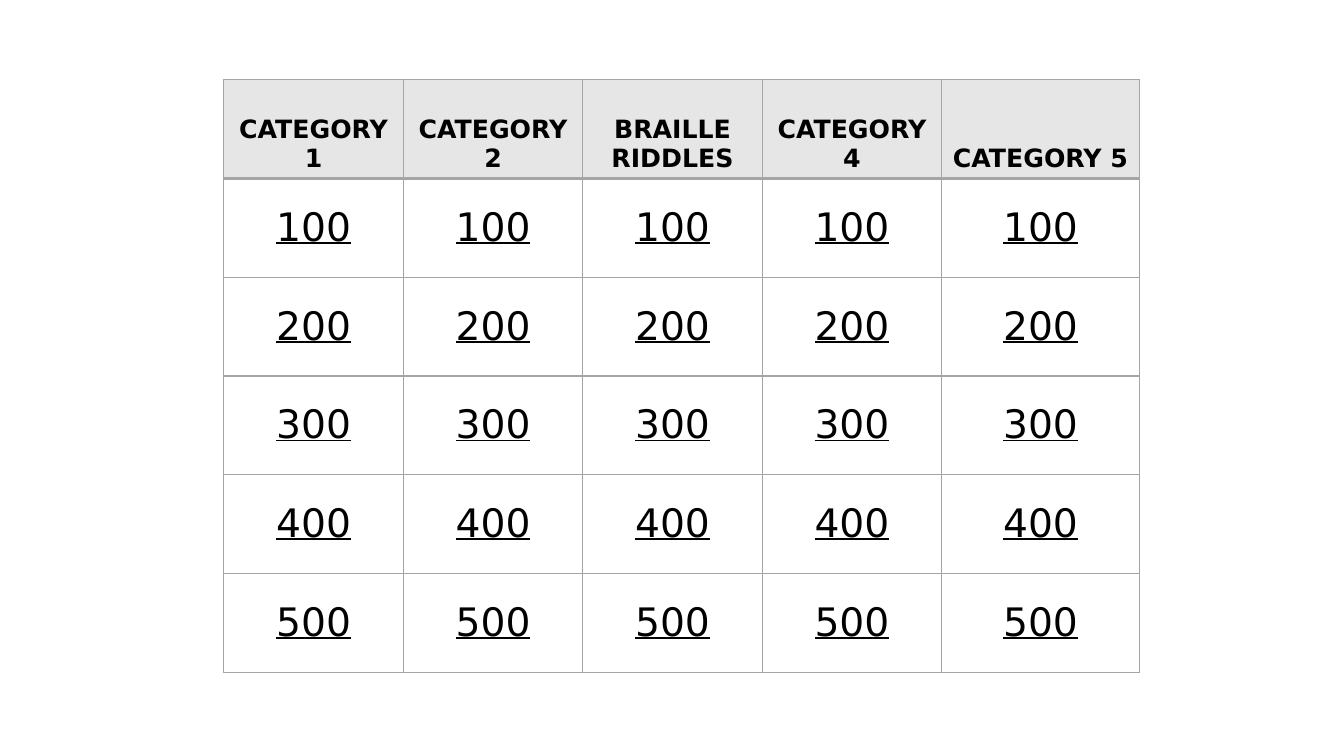
from pptx import Presentation
from pptx.dml.color import RGBColor
from pptx.enum.text import MSO_ANCHOR, PP_ALIGN
from pptx.oxml import parse_xml
from pptx.oxml.ns import nsdecls
from pptx.util import Inches, Pt

COLORS = {"head": "E7E6E6", "body": "FFFFFF", "line": "A5A5A5", "text": "000000"}
FONT = "DejaVu Sans"
HEADS = ["CATEGORY 1", "CATEGORY 2", "BRAILLE RIDDLES", "CATEGORY 4", "CATEGORY 5"]
WIDTHS = [1.78] * 4 + [1.96]
HEIGHT = 0.98

rows = [HEADS] + [[str(100 * n)] * len(HEADS) for n in range(1, 6)]


def add_edge(cell, side, width):
    cell._tc.get_or_add_tcPr().append(parse_xml(
        f'<a:ln{side} {nsdecls("a")} w="{Pt(width)}"><a:solidFill>'
        f'<a:srgbClr val="{COLORS["line"]}"/></a:solidFill></a:ln{side}>'))


deck = Presentation()
deck.slide_width = Inches(13.33)
deck.slide_height = Inches(7.5)
slide = deck.slides.add_slide(deck.slide_layouts[6])

frame = slide.shapes.add_table(
    len(rows), len(HEADS), Inches(2.22), Inches(0.79),
    Inches(sum(WIDTHS)), Inches(HEIGHT * len(rows)))
board = frame.table
board.horz_banding = False
for col, width in zip(board.columns, WIDTHS):
    col.width = Inches(width)

for r, texts in enumerate(rows):
    head = r == 0
    board.rows[r].height = Inches(HEIGHT)
    for c, text in enumerate(texts):
        cell = board.cell(r, c)
        for side in "LRTB":
            add_edge(cell, side, 2 if head and side == "B" else 1)
        cell.fill.solid()
        cell.fill.fore_color.rgb = RGBColor.from_string(COLORS["head" if head else "body"])
        cell.vertical_anchor = MSO_ANCHOR.BOTTOM if head else MSO_ANCHOR.MIDDLE
        para = cell.text_frame.paragraphs[0]
        para.alignment = PP_ALIGN.CENTER
        run = para.add_run()
        run.text = text
        run.font.name = FONT
        run.font.size = Pt(18 if head else 28)
        run.font.bold = head
        run.font.underline = not head
        run.font.color.rgb = RGBColor.from_string(COLORS["text"])

deck.save("out.pptx")
